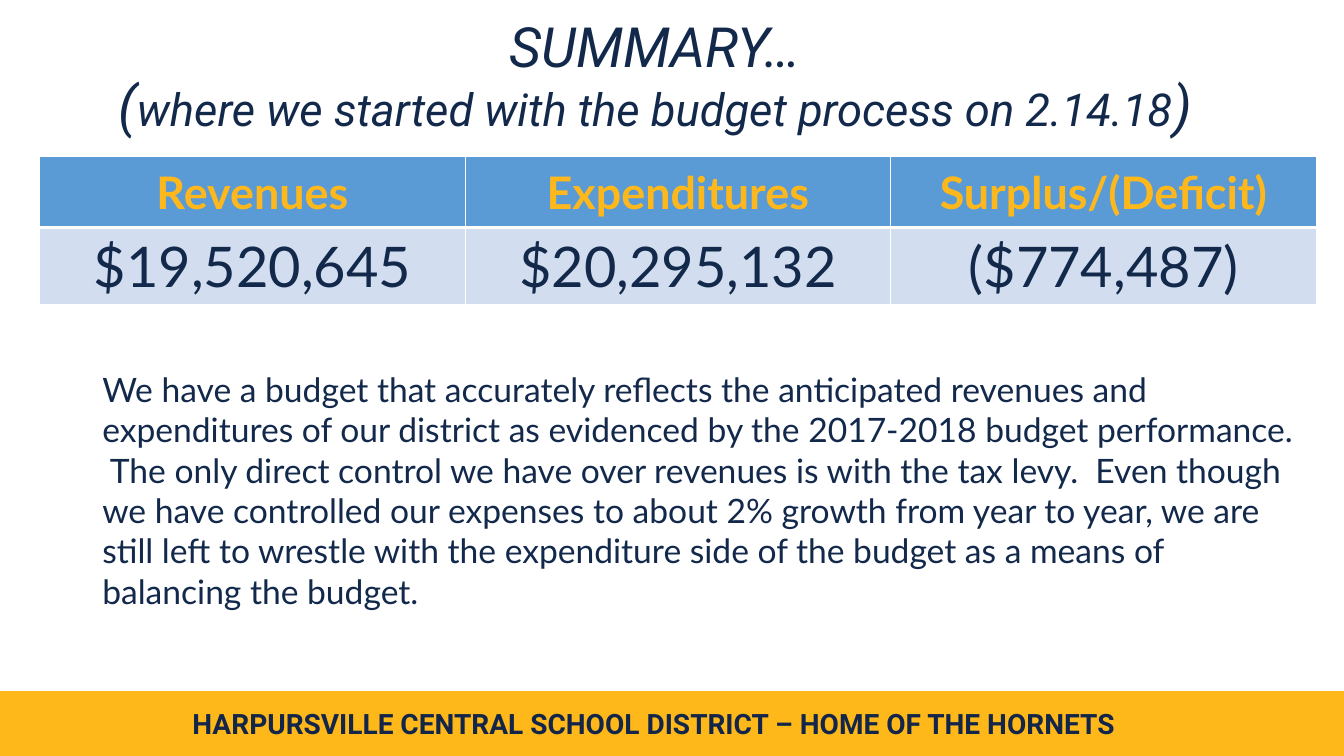
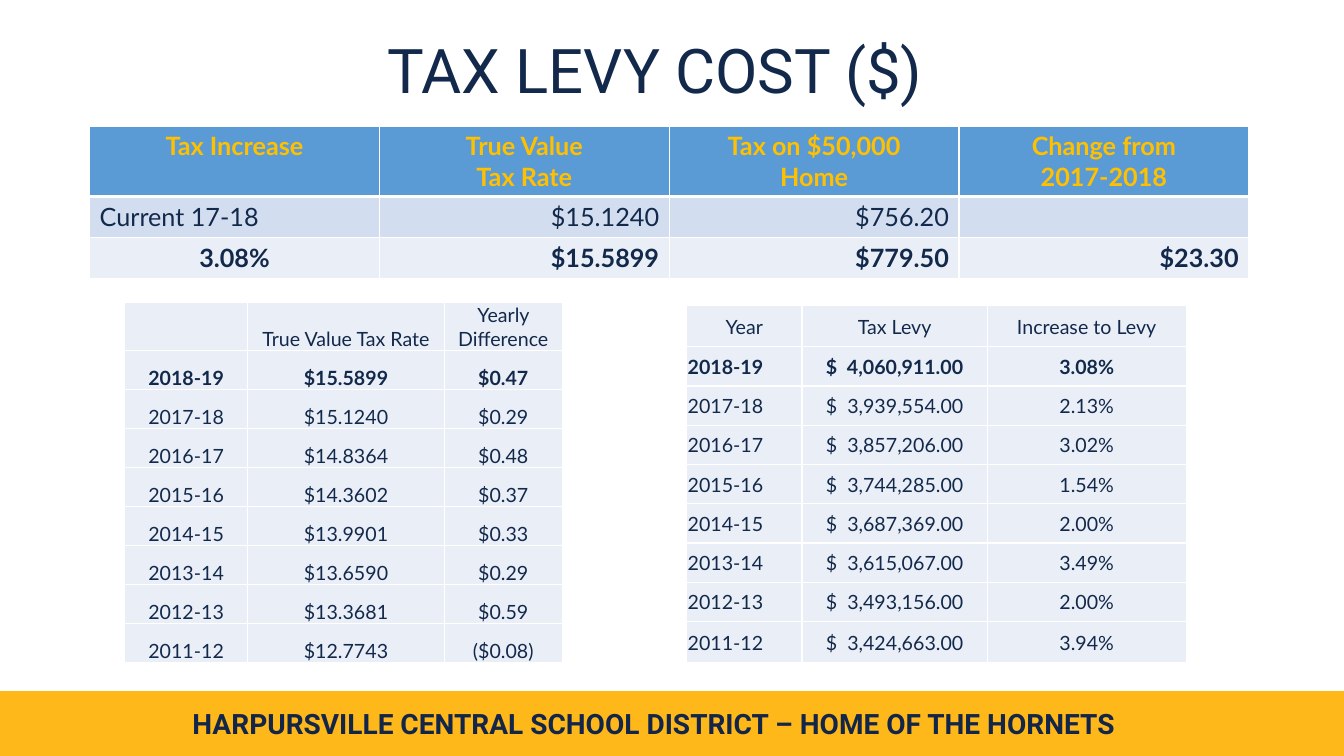
from lxml import etree
from pptx import Presentation
from pptx.dml.color import RGBColor
from pptx.enum import shapes, text
from pptx.oxml.ns import qn
from pptx.util import Pt

ALIGN = {"l": text.PP_ALIGN.LEFT, "c": text.PP_ALIGN.CENTER, "r": text.PP_ALIGN.RIGHT}
ANCHOR = {"t": text.MSO_ANCHOR.TOP, "m": text.MSO_ANCHOR.MIDDLE, "b": text.MSO_ANCHOR.BOTTOM}


def rgb(color):
    return RGBColor.from_string(color)


class Deck:
    NAVY, FOOTER_NAVY = "13294B", "132649"
    GOLD, BAND_GOLD, AMBER = "FFB81C", "FFB819", "FFC000"
    WHITE, BLUE, PALE, PALER = "FFFFFF", "5B9BD5", "D2DEEF", "EAEFF7"
    HEAD, BODY = "Roboto", "Lato"

    def __init__(self):
        self.prs = Presentation()
        self.prs.slide_width, self.prs.slide_height = Pt(960), Pt(540)

    # Slide with the shared footer band
    def new_slide(self):
        self.s = self.prs.slides.add_slide(self.prs.slide_layouts[6])
        self.rect(0, 494, 960, 45.4, self.BAND_GOLD, self.BAND_GOLD)
        self.textbox(127, 501, 680, 32,
                     "HARPURSVILLE CENTRAL SCHOOL DISTRICT – HOME OF THE HORNETS",
                     align="c", size=20, font=self.HEAD, color=self.FOOTER_NAVY, bold=True)

    def style(self, p, size, align="l", font=BODY, color=NAVY, bold=False, italic=False):
        p.alignment = ALIGN[align]
        for r in p.runs:
            f = r.font
            f.name, f.size, f.bold, f.italic = font, Pt(size), bold, italic
            f.color.rgb = rgb(color)

    def rect(self, x, y, w, h, fill, line=None):
        sp = self.s.shapes.add_shape(shapes.MSO_SHAPE.RECTANGLE, Pt(x), Pt(y), Pt(w), Pt(h))
        sp.shadow.inherit = False
        sp.fill.solid()
        sp.fill.fore_color.rgb = rgb(fill)
        if line:
            sp.line.color.rgb = rgb(line)
            sp.line.width = Pt(1)
        else:
            sp.line.fill.background()
        return sp

    def textbox(self, x, y, w, h, content, **look):
        tf = self.s.shapes.add_textbox(Pt(x), Pt(y), Pt(w), Pt(h)).text_frame
        tf.word_wrap = True
        tf.text = content
        self.style(tf.paragraphs[0], **look)

    # Title made of (text, size) parts
    def title(self, x, y, w, parts, italic=False):
        tf = self.rect(x, y, w, 75, self.WHITE).text_frame
        tf.word_wrap = True
        tf.vertical_anchor = ANCHOR["m"]
        p = tf.paragraphs[0]
        p.text = parts[0][0]
        for part, _ in parts[1:]:
            p.add_run().text = part
        self.style(p, parts[0][1], "c", self.HEAD, italic=italic)
        for r, (_, size) in zip(reversed(p.runs), reversed(parts)):
            r.font.size = Pt(size)
        p.line_spacing = 0.9

    def borders(self, cell, top, bottom):
        tc_pr = cell._tc.get_or_add_tcPr()
        for side, width in (("L", 1), ("R", 1), ("T", top), ("B", bottom)):
            ln = etree.SubElement(tc_pr, qn("a:ln" + side), w=str(Pt(width)))
            fill = etree.SubElement(ln, qn("a:solidFill"))
            etree.SubElement(fill, qn("a:srgbClr"), val=self.WHITE)

    # Table; each row is (cell texts, alignments, fill, look)
    def table(self, x, y, widths, heights, rows, anchor="t", tight=False, head_rule=1):
        frame = self.s.shapes.add_table(len(rows), len(widths), Pt(x), Pt(y),
                                        Pt(sum(widths)), Pt(sum(heights)))
        tbl = frame.table
        tbl.first_row = tbl.horz_banding = False
        for col, w in zip(tbl.columns, widths):
            col.width = Pt(w)
        for i, (cells, aligns, fill, look) in enumerate(rows):
            tbl.rows[i].height = Pt(heights[i])
            for j, content in enumerate(cells):
                cell = tbl.cell(i, j)
                cell.vertical_anchor = ANCHOR[anchor]
                if tight:
                    cell.margin_left = cell.margin_right = cell.margin_top = Pt(0.7)
                    cell.margin_bottom = 0
                self.borders(cell, head_rule if i == 1 else 1, head_rule if i == 0 else 1)
                cell.fill.solid()
                cell.fill.fore_color.rgb = rgb(fill)
                cell.text_frame.text = content
                for p in cell.text_frame.paragraphs:
                    self.style(p, align=aligns[j], **look)

    # Small history table: plain heading, bold latest year, plain older years
    def history(self, x, y, widths, heights, heading, years, aligns, anchor):
        rows = [(heading, "ccc", self.PALER, dict(size=14))]
        rows += [(cells, aligns, self.PALER, dict(size=14, bold=i == 0))
                 for i, cells in enumerate(years)]
        self.table(x, y, widths, heights, rows, anchor, tight=True)


def summary(d):
    d.new_slide()
    d.title(42, 19, 852, [("SUMMARY…\v(", 39.6),
                          ("where we started with the budget process on 2.14.18", 32.4),
                          (")", 39.6)], italic=True)
    d.table(28.3, 112, [304] * 3, [50.4, 55.2], [
        (["Revenues", "Expenditures", "Surplus/(Deficit)"], "ccc", d.BLUE,
         dict(size=32, color=d.GOLD, bold=True)),
        (["$19,520,645", "$20,295,132", "($774,487)"], "ccc", d.PALE, dict(size=40)),
    ], anchor="m", head_rule=3)
    d.textbox(66, 260, 866, 181,
              "We have a budget that accurately reflects the anticipated revenues and "
              "expenditures of our district as evidenced by the 2017-2018 budget performance.  "
              "The only direct control we have over revenues is with the tax levy.  Even though "
              "we have controlled our expenses to about 2% growth from year to year, we are "
              "still left to wrestle with the expenditure side of the budget as a means of "
              "balancing the budget.", size=24)


def tax_levy(d):
    d.new_slide()
    d.title(54, 15, 828, [("TAX LEVY COST ($)", 44)])

    # Cost to a home owner
    d.table(64, 90, [207] * 4, [50.4, 29.2, 29.2], [
        (["Tax Increase", "True Value\nTax Rate", "Tax on $50,000\nHome",
          "Change from\n2017-2018"], "cccc", d.BLUE, dict(size=18, color=d.AMBER, bold=True)),
        (["Current 17-18", "$15.1240", "$756.20", ""], "lrrr", d.PALE, dict(size=18)),
        (["3.08%", "$15.5899", "$779.50", "$23.30"], "crrr", d.PALER,
         dict(size=18, bold=True)),
    ], head_rule=3)

    # Year, tax rate, yearly difference, levy, increase to levy
    years = [
        ("2018-19", "$15.5899", "$0.47", "4,060,911.00", "3.08%"),
        ("2017-18", "$15.1240", "$0.29", "3,939,554.00", "2.13%"),
        ("2016-17", "$14.8364", "$0.48", "3,857,206.00", "3.02%"),
        ("2015-16", "$14.3602", "$0.37", "3,744,285.00", "1.54%"),
        ("2014-15", "$13.9901", "$0.33", "3,687,369.00", "2.00%"),
        ("2013-14", "$13.6590", "$0.29", "3,615,067.00", "3.49%"),
        ("2012-13", "$13.3681", "$0.59", "3,493,156.00", "2.00%"),
        ("2011-12", "$12.7743", "($0.08)", "3,424,663.00", "3.94%"),
    ]
    d.history(89, 216, [88, 140.4, 84.2], [34.4] + [27.86] * 8,
              ["", "True Value Tax Rate", "Yearly Difference"],
              [row[:3] for row in years], "ccc", "b")
    d.history(490.5, 218.4, [82.4, 132.4, 142], [29.3] + [28.04] * 7 + [29.3],
              ["Year", "Tax Levy", "Increase to Levy"],
              [(year, f"$  {levy}", rise) for year, _, _, levy, rise in years], "lcc", "m")


def main():
    d = Deck()
    summary(d)
    tax_levy(d)
    d.prs.save("out.pptx")


if __name__ == "__main__":
    main()
